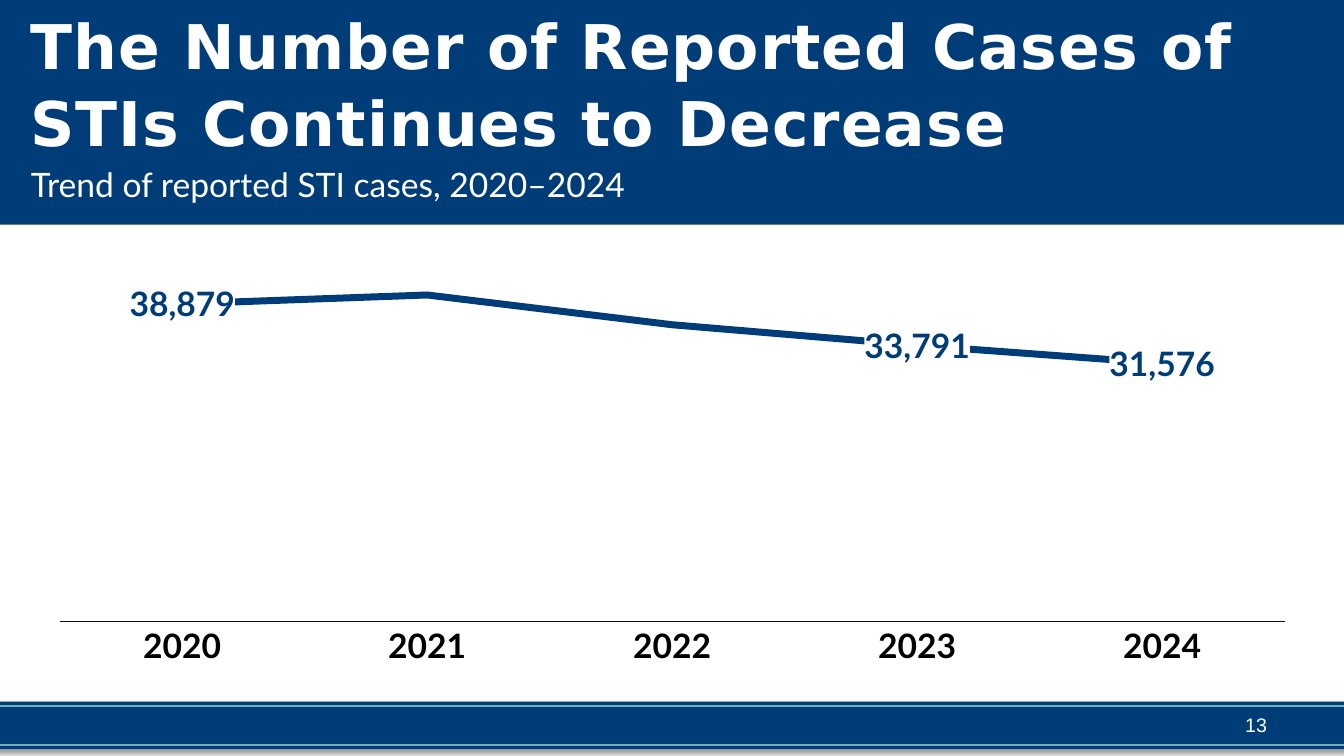
import pptx
import pptx.chart.data
import pptx.dml.color
import pptx.enum.chart
import pptx.enum.shapes
import pptx.enum.text
import pptx.oxml
import pptx.oxml.ns
import pptx.util
from pptx.util import Cm, Pt

# Content
TITLE = "The Number of Reported Cases of STIs Continues to Decrease"
SUBTITLE = "Trend of reported STI cases, 2020–2024"
PAGE_NUMBER = "13"
CASES = {"2020": 38879, "2021": 39958, "2022": 36310, "2023": 33791, "2024": 31576}
LABELLED_YEARS = ("2020", "2023", "2024")

# Style
NAVY = pptx.dml.color.RGBColor(0x00, 0x3D, 0x78)
TEAL = pptx.dml.color.RGBColor(0x72, 0xAE, 0xB6)
WHITE = pptx.dml.color.RGBColor(0xFF, 0xFF, 0xFF)
BLACK = pptx.dml.color.RGBColor(0x00, 0x00, 0x00)
AXIS = pptx.dml.color.RGBColor(0x0D, 0x0D, 0x0D)
ALIGN = pptx.enum.text.PP_ALIGN
ANCHOR = pptx.enum.text.MSO_ANCHOR
PAGE_WIDTH, PAGE_HEIGHT = Cm(33.87), Cm(19.05)
BAND_HEIGHT = Cm(5.66)
FOOTER_LEFT, FOOTER_WIDTH = Cm(-0.33), Cm(34.54)
# Inner plot area as fractions of the chart frame
PLOT = {"x": 0.01, "y": 0.04, "w": 0.98, "h": 0.81}


def xml(markup):
    """Parse markup in the drawing and chart namespaces."""
    head, tail = markup.split(">", 1)
    closing = "/" if head.endswith("/") else ""
    head = head.rstrip("/")
    names = pptx.oxml.ns.nsdecls("a", "c")
    return pptx.oxml.parse_xml(f"{head} {names}{closing}>{tail}")


def style_font(font, size, color, name="Lato", bold=False):
    font.name, font.size, font.bold = name, Pt(size), bold
    font.color.rgb = color


def write(shape, text, *, size, color=WHITE, name="Lato", bold=False,
          align=ALIGN.LEFT, anchor=ANCHOR.TOP, line_spacing=None, tracking=None):
    frame = shape.text_frame
    frame.word_wrap = True
    frame.vertical_anchor = anchor
    para = frame.paragraphs[0]
    para.alignment = align
    para.line_spacing = line_spacing
    span = para.add_run()
    span.text = text
    style_font(span.font, size, color, name, bold)
    if tracking:
        span._r.get_or_add_rPr().set("spc", str(tracking))
    return para


def add_footer(page):
    bar = page.shapes.add_shape(pptx.enum.shapes.MSO_SHAPE.RECTANGLE,
                                FOOTER_LEFT, Cm(17.68), FOOTER_WIDTH, Cm(1.19))
    bar.fill.solid()
    bar.fill.fore_color.rgb = NAVY
    bar.line.fill.background()
    bar._element.spPr.append(xml(
        '<a:effectLst><a:outerShdw blurRad="50800" dist="38100" dir="2700000">'
        '<a:srgbClr val="000000"><a:alpha val="40000"/></a:srgbClr>'
        '</a:outerShdw></a:effectLst>'))
    for top in (Cm(17.78), Cm(18.77)):
        rule = page.shapes.add_connector(pptx.enum.shapes.MSO_CONNECTOR.STRAIGHT,
                                         FOOTER_LEFT, top, FOOTER_LEFT + FOOTER_WIDTH, top)
        rule.line.color.rgb = TEAL
        rule.line.width = Pt(1.5)
        rule._element.spPr.append(xml("<a:effectLst/>"))
    number = page.shapes.add_textbox(Cm(24.28), Cm(17.75), Cm(7.9), Cm(1.02))
    write(number, PAGE_NUMBER, size=14, name="Arial", align=ALIGN.RIGHT, anchor=ANCHOR.MIDDLE)


def add_heading(page):
    title = page.shapes.title
    title.left, title.top, title.width, title.height = 0, 0, PAGE_WIDTH, BAND_HEIGHT
    title.fill.solid()
    title.fill.fore_color.rgb = NAVY
    para = write(title, TITLE, size=44, name="DejaVu Sans", bold=True,
                 line_spacing=1.04, tracking=70)
    para._p.get_or_add_pPr().set("marL", str(Cm(0.51)))
    subtitle = page.shapes.add_textbox(Cm(0.53), Cm(4.01), Cm(32.82), Cm(1.27))
    write(subtitle, SUBTITLE, size=24)


def add_trend(page):
    data = pptx.chart.data.CategoryChartData(number_format="#,##0")
    data.categories = list(CASES)
    data.add_series("Series 1", list(CASES.values()))
    chart = page.shapes.add_chart(pptx.enum.chart.XL_CHART_TYPE.LINE, Cm(1.19), Cm(5.94),
                                  Cm(31.5), Cm(11.43), data).chart
    chart.has_legend = chart.has_title = False
    style_font(chart.font, 10, WHITE, "Roboto")

    # Axes
    years, counts = chart.category_axis, chart.value_axis
    years.major_tick_mark = pptx.enum.chart.XL_TICK_MARK.NONE
    years.has_major_gridlines = False
    years.format.line.color.rgb = AXIS
    years.format.line.width = Pt(0.75)
    style_font(years.tick_labels.font, 24, BLACK, bold=True)
    counts.minimum_scale, counts.maximum_scale = 0, 45000
    counts.has_major_gridlines = False
    counts.visible = False

    # Line and value labels
    plot = chart.plots[0]
    plot.vary_by_categories = False
    series = plot.series[0]
    series.smooth = False
    series.marker.style = pptx.enum.chart.XL_MARKER_STYLE.NONE
    series.format.line.color.rgb = NAVY
    series.format.line.width = Pt(5)
    labels = series.data_labels
    labels.show_value = True
    labels.number_format, labels.number_format_is_linked = "#,##0", False
    labels.position = pptx.enum.chart.XL_LABEL_POSITION.CENTER
    style_font(labels.font, 24, NAVY, bold=True)
    labels._element.find(pptx.oxml.ns.qn("c:txPr")).addprevious(xml(
        '<c:spPr><a:solidFill><a:srgbClr val="FFFFFF"/></a:solidFill></c:spPr>'))
    hidden = [place for place, year in enumerate(CASES) if year not in LABELLED_YEARS]
    for order, place in enumerate(hidden):
        labels._element.insert(order, xml(
            f'<c:dLbl><c:idx val="{place}"/><c:delete val="1"/></c:dLbl>'))

    # Plot position
    area = chart._chartSpace.chart.plotArea
    for old in area.findall(pptx.oxml.ns.qn("c:layout")):
        area.remove(old)
    sizes = "".join(f'<c:{key} val="{value}"/>' for key, value in PLOT.items())
    area.insert(0, xml(
        '<c:layout><c:manualLayout><c:layoutTarget val="inner"/>'
        f'<c:xMode val="edge"/><c:yMode val="edge"/>{sizes}</c:manualLayout></c:layout>'))


def main():
    deck = pptx.Presentation()
    deck.slide_width, deck.slide_height = PAGE_WIDTH, PAGE_HEIGHT
    page = deck.slides.add_slide(deck.slide_layouts.get_by_name("Title Only"))
    add_footer(page)
    add_heading(page)
    add_trend(page)
    deck.save("out.pptx")


if __name__ == "__main__":
    main()
